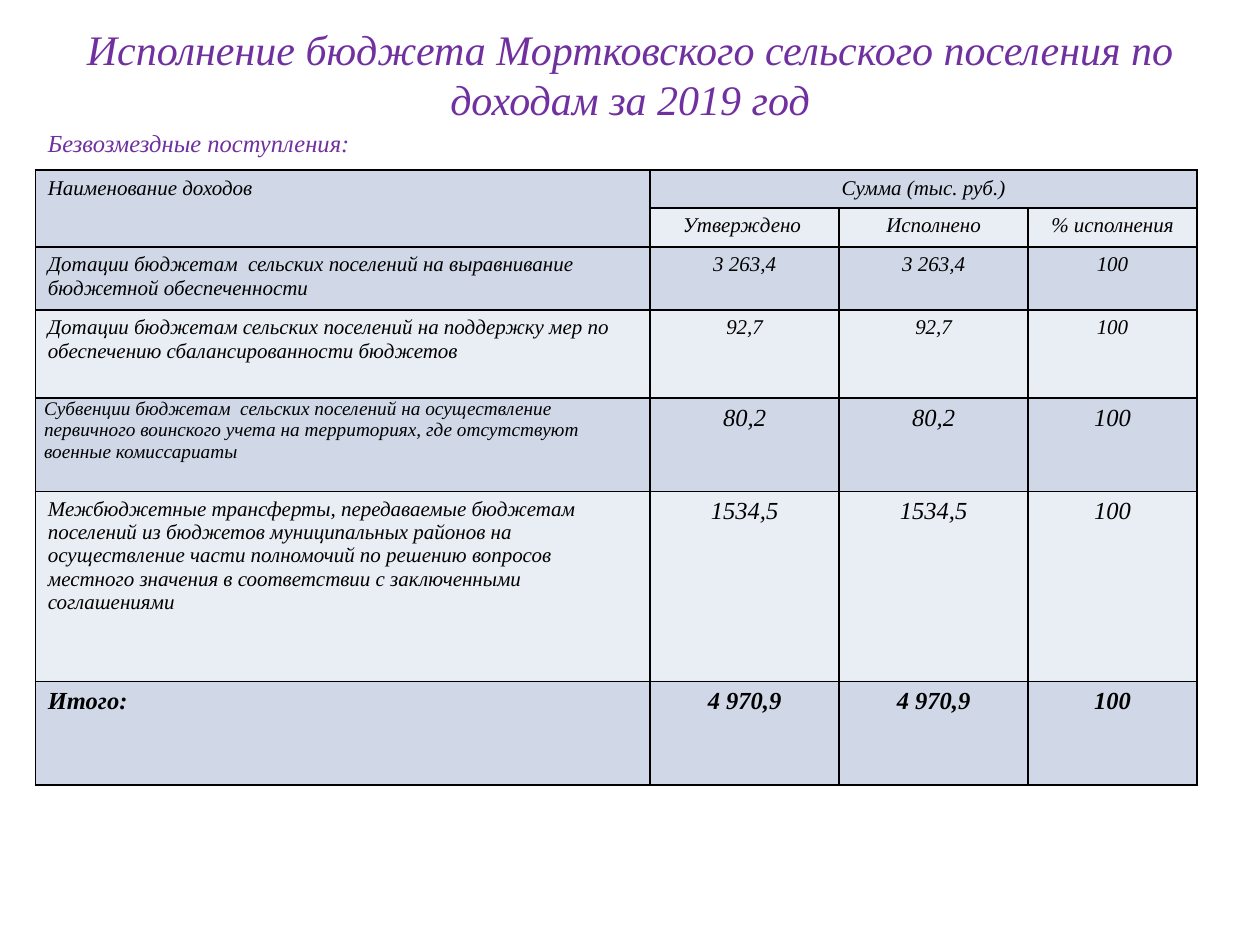
from dataclasses import dataclass

from pptx import Presentation
from pptx.dml.color import RGBColor
from pptx.enum.text import MSO_ANCHOR, MSO_AUTO_SIZE, PP_ALIGN
from pptx.oxml.ns import qn
from pptx.util import Inches, Pt
from lxml import etree

LEFT, CENTER = PP_ALIGN.LEFT, PP_ALIGN.CENTER
MIDDLE = MSO_ANCHOR.MIDDLE
NO_FIT = MSO_AUTO_SIZE.NONE


@dataclass(frozen=True)
class Theme:
    font: str = "Times New Roman"
    accent: str = "7030A0"
    ink: str = "000000"
    paper: str = "FFFFFF"
    dark: str = "D0D8E8"
    light: str = "E9EDF4"
    head: int = 24
    large: int = 14
    base: int = 12
    small: int = 11
    line: int = 1


THEME = Theme()
TITLE = "Исполнение бюджета Мортковского сельского поселения по доходам за 2019 год"
COLS = [4.88, 1.5, 1.5, 1.34]
ROWS = [0.36, 0.3, 0.31, 0.5, 0.7, 0.74, 1.51, 0.82]
HEADS = [
    ["Безвозмездные поступления:"],
    ["Наименование доходов", "Сумма (тыс. руб.)"],
    ["", "Утверждено ", "Исполнено", "% исполнения"],
]
ITEMS = [
    ("Дотации бюджетам  сельских поселений на выравнивание бюджетной обеспеченности",
     "3 263,4", THEME.base, THEME.base),
    ("Дотации бюджетам сельских поселений на поддержку мер по обеспечению "
     "сбалансированности бюджетов", "92,7", THEME.base, THEME.base),
    ("Субвенции бюджетам  сельских поселений на осуществление первичного воинского "
     "учета на территориях, где отсутствуют военные комиссариаты",
     "80,2", THEME.small, THEME.large),
    ("Межбюджетные трансферты, передаваемые бюджетам поселений из бюджетов "
     "муниципальных районов на осуществление части полномочий по решению вопросов "
     "местного значения в соответствии с заключенными соглашениями",
     "1534,5", THEME.base, THEME.large),
    ("Итого:", "4 970,9", THEME.large, THEME.large),
]


def write(frame, text, size, color=THEME.ink, align=LEFT, bold=False):
    para = frame.paragraphs[0]
    para.alignment = align
    run = para.add_run()
    run.text = text
    font = run.font
    font.name, font.size = THEME.font, Pt(size)
    font.italic, font.bold = True, bold
    font.color.rgb = RGBColor.from_string(color)


def edge(cell, side, color):
    props = cell._tc.get_or_add_tcPr()
    line = etree.SubElement(props, qn(f"a:ln{side}"), w=str(Pt(THEME.line)))
    fill = etree.SubElement(line, qn("a:solidFill"))
    etree.SubElement(fill, qn("a:srgbClr"), val=color)


def paint(cell, row):
    for side in "LRTB":
        plain = row == 0 and side != "B"
        edge(cell, side, THEME.paper if plain else THEME.ink)
    band = THEME.dark if row % 2 else THEME.light
    cell.fill.solid()
    cell.fill.fore_color.rgb = RGBColor.from_string(band if row else THEME.paper)


def add_title(slide, left, top, width, height):
    title = slide.shapes.title
    title.left, title.top = Inches(left), Inches(top)
    title.width, title.height = Inches(width), Inches(height)
    frame = title.text_frame
    frame.word_wrap, frame.auto_size = True, NO_FIT
    frame.vertical_anchor = MIDDLE
    write(frame, TITLE, THEME.head, THEME.accent, CENTER)


def fill_heads(table):
    for row, texts in enumerate(HEADS):
        for col, text in enumerate(texts):
            if text:
                size = THEME.base if row else THEME.large
                color = THEME.ink if row else THEME.accent
                write(table.cell(row, col).text_frame, text, size, color,
                      CENTER if col else LEFT)


def fill_items(table):
    for row, (name, total, size, num) in enumerate(ITEMS, len(HEADS)):
        bold = row == len(ROWS) - 1
        first = table.cell(row, 0)
        write(first.text_frame, name, size, bold=bold)
        if size == THEME.small:
            first.margin_left = first.margin_right = Inches(0.07)
            first.margin_top = first.margin_bottom = 0
        for col, text in enumerate([total, total, "100"], 1):
            write(table.cell(row, col).text_frame, text, num, align=CENTER, bold=bold)


def add_grid(slide, left, top):
    table = slide.shapes.add_table(
        len(ROWS), len(COLS), Inches(left), Inches(top),
        Inches(sum(COLS)), Inches(sum(ROWS))).table
    for col, width in zip(table.columns, COLS):
        col.width = Inches(width)
    for row, height in enumerate(ROWS):
        table.rows[row].height = Inches(height)
        for col in range(len(COLS)):
            paint(table.cell(row, col), row)
    table.cell(0, 0).merge(table.cell(0, 3))
    table.cell(1, 0).merge(table.cell(2, 0))
    table.cell(1, 1).merge(table.cell(1, 3))
    fill_heads(table)
    fill_items(table)


def main():
    deck = Presentation()
    deck.slide_width, deck.slide_height = Inches(10), Inches(7.5)
    slide = deck.slides.add_slide(deck.slide_layouts[5])
    add_title(slide, 0.5, 0, 9, 1.17)
    add_grid(slide, 0.28, 0.99)
    deck.save("out.pptx")


if __name__ == "__main__":
    main()
